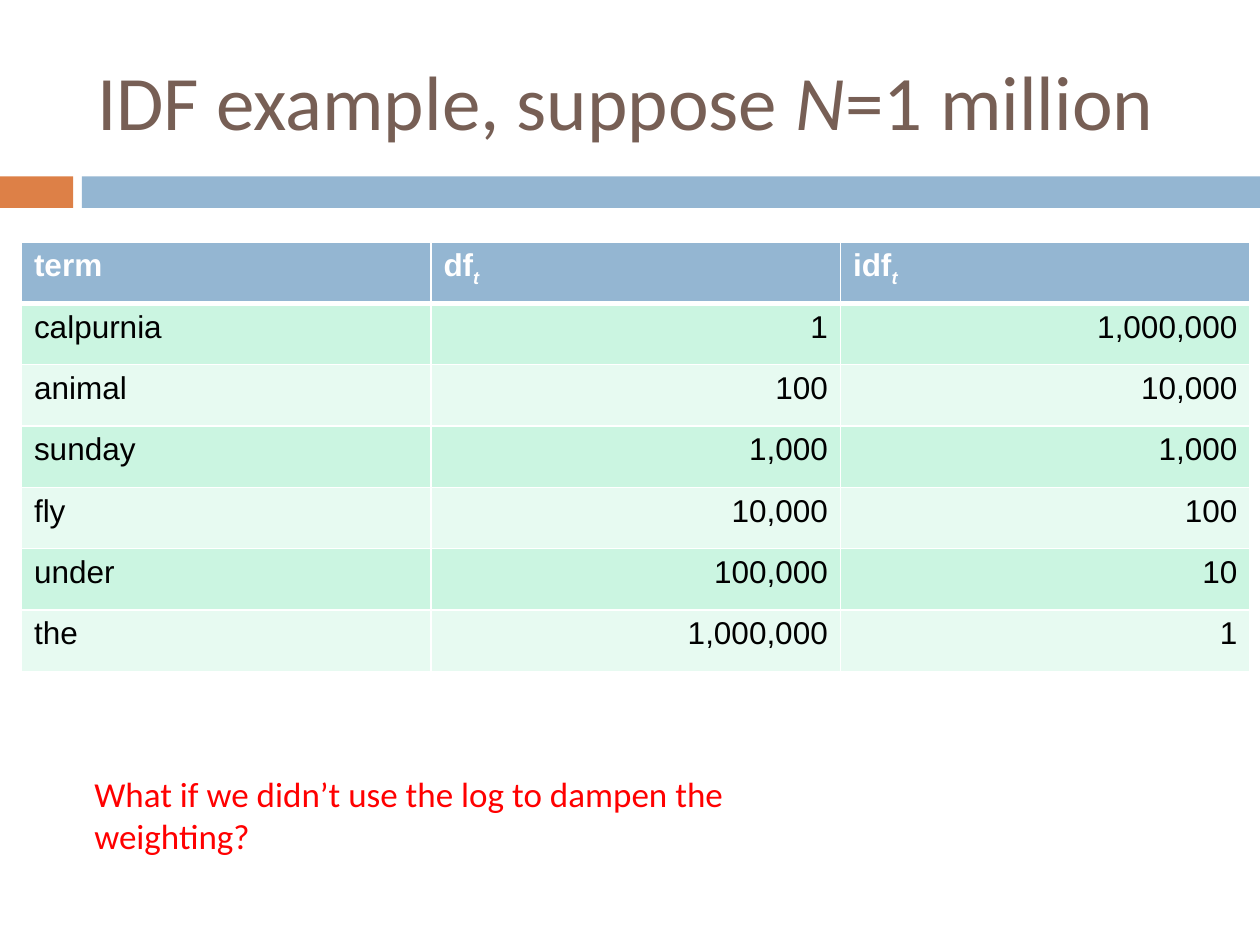
from lxml.etree import SubElement
from pptx import Presentation
from pptx.dml.color import RGBColor
from pptx.enum.shapes import MSO_SHAPE
from pptx.enum.text import MSO_ANCHOR, PP_ALIGN
from pptx.oxml.ns import qn
from pptx.util import Inches, Pt

BROWN = RGBColor(0x77, 0x5F, 0x55)
ORANGE = RGBColor(0xDD, 0x80, 0x47)
BLUE = RGBColor(0x94, 0xB6, 0xD2)
MINT = RGBColor(0xCB, 0xF5, 0xE1)
PALE_MINT = RGBColor(0xE7, 0xFA, 0xF1)
WHITE = RGBColor(0xFF, 0xFF, 0xFF)
BLACK = RGBColor(0x00, 0x00, 0x00)
RED = RGBColor(0xFF, 0x00, 0x00)

TITLE = [("IDF example, suppose ", False), ("N", True), ("=1 million", False)]
BANDS = [(0, 0.58, ORANGE), (0.65, 9.35, BLUE)]  # left, width, colour
HEADER = [("term", ""), ("df", "t"), ("idf", "t")]  # name, subscript
ROWS = [
    ("calpurnia", "1", "1,000,000"),
    ("animal", "100", "10,000"),
    ("sunday", "1,000", "1,000"),
    ("fly", "10,000", "100"),
    ("under", "100,000", "10"),
    ("the", "1,000,000", "1"),
]
QUESTION = "What if we didn’t use the log to dampen the weighting?"


def set_font(paragraph, name, size, color, bold=False):
    font = paragraph.font
    font.name, font.size, font.bold = name, Pt(size), bold
    font.color.rgb = color


def style_cell(cell, fill, top, bottom):
    """Fill a cell and give it white borders; top and bottom are in points."""
    properties = cell._tc.get_or_add_tcPr()
    for side, width in (("L", 1), ("R", 1), ("T", top), ("B", bottom)):
        line = SubElement(properties, qn(f"a:ln{side}"), w=str(Pt(width)))
        color = SubElement(line, qn("a:solidFill"))
        SubElement(color, qn("a:srgbClr"), val=str(WHITE))
    cell.fill.solid()
    cell.fill.fore_color.rgb = fill


def add_bands(slide):
    for left, width, color in BANDS:
        band = slide.shapes.add_shape(
            MSO_SHAPE.RECTANGLE, Inches(left), Inches(1.4), Inches(width), Inches(0.25))
        band.shadow.inherit = False
        band.fill.solid()
        band.fill.fore_color.rgb = color
        band.line.fill.background()


def fill_title(slide):
    title = slide.shapes.title
    title.left, title.top = Inches(0.67), Inches(0.25)
    title.width, title.height = Inches(8.92), Inches(1.08)
    title.text_frame.vertical_anchor = MSO_ANCHOR.MIDDLE
    heading = title.text_frame.paragraphs[0]
    heading.alignment = PP_ALIGN.LEFT
    set_font(heading, "Calibri", 44, BROWN)
    for text, italic in TITLE:
        run = heading.add_run()
        run.text = text
        run.font.italic = italic


def add_idf_table(slide):
    table = slide.shapes.add_table(
        len(ROWS) + 1, len(HEADER),
        Inches(0.17), Inches(1.92), Inches(9.75), Inches(3.41)).table

    for column, (name, subscript) in enumerate(HEADER):
        cell = table.cell(0, column)
        style_cell(cell, BLUE, 1, 3)
        label = cell.text_frame.paragraphs[0]
        set_font(label, "Arial", 18, WHITE, bold=True)
        label.add_run().text = name
        if subscript:
            run = label.add_run()
            run.text = subscript
            run.font.italic = True
            run.font._element.set("baseline", "-25000")

    for row, values in enumerate(ROWS, start=1):
        for column, value in enumerate(values):
            cell = table.cell(row, column)
            style_cell(cell, MINT if row % 2 else PALE_MINT, 3 if row == 1 else 1, 1)
            cell.text = value
            entry = cell.text_frame.paragraphs[0]
            entry.alignment = PP_ALIGN.RIGHT if column else PP_ALIGN.LEFT
            set_font(entry, "Arial", 18, BLACK)


def add_question(slide):
    question = slide.shapes.add_textbox(
        Inches(0.65), Inches(6.08), Inches(6.44), Inches(0.44)).text_frame
    question.word_wrap = True
    question.text = QUESTION
    set_font(question.paragraphs[0], "Calibri", 20, RED)


def main():
    deck = Presentation()
    deck.slide_width, deck.slide_height = Inches(10), Inches(7.5)
    slide = deck.slides.add_slide(deck.slide_layouts.get_by_name("Title Only"))
    add_bands(slide)
    fill_title(slide)
    add_idf_table(slide)
    add_question(slide)
    deck.save("out.pptx")


if __name__ == "__main__":
    main()
